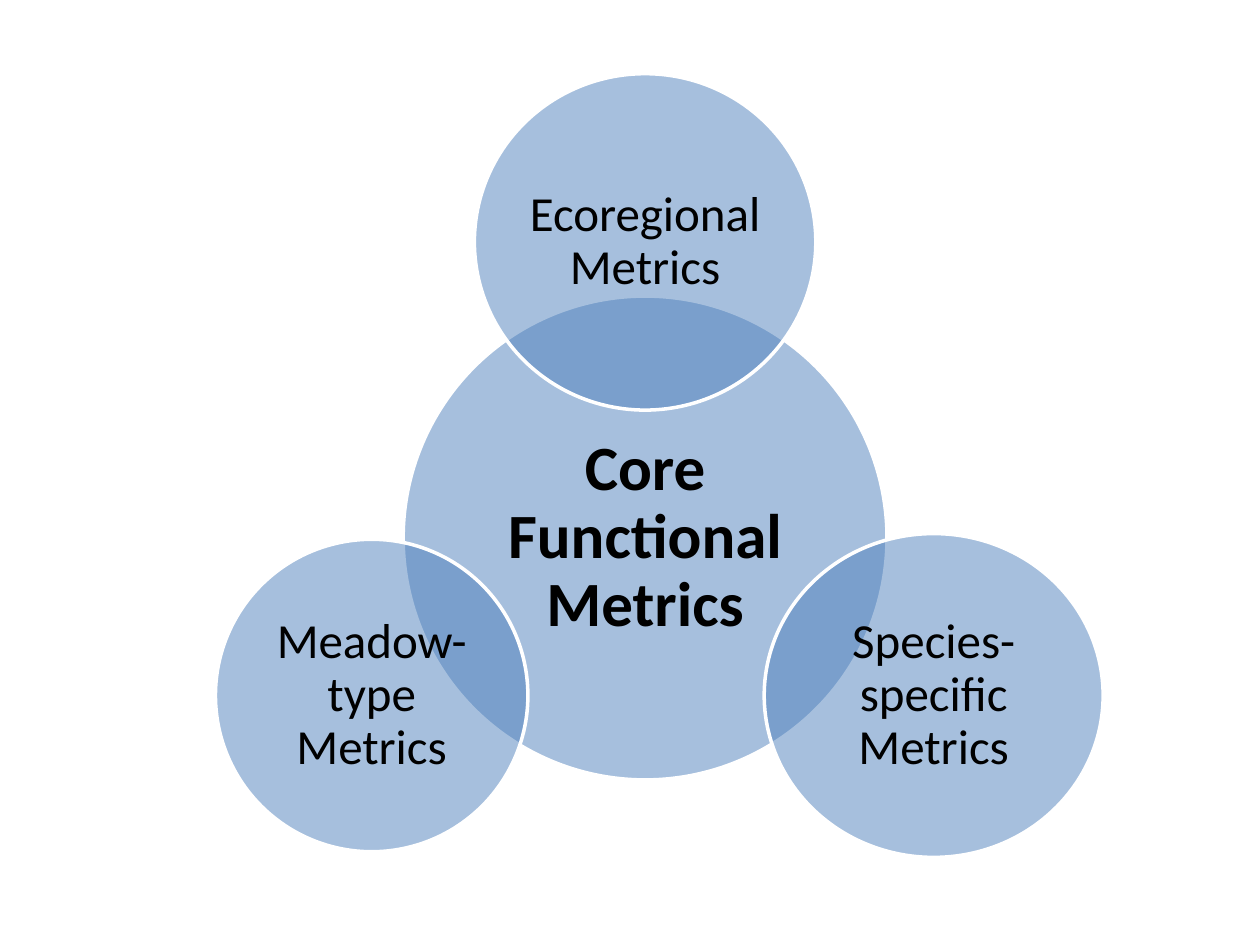
from math import sqrt

from pptx import Presentation
from pptx import util as u
from pptx.dml.color import RGBColor
from pptx.enum import shapes, text
from pptx.oxml import parse_xml
from pptx.oxml.ns import nsdecls, qn

BLUE, WHITE, BLACK = "4F81BD", "FFFFFF", "000000"
CORE = dict(size=36, bold=True, inset=0.05)
SIDE = dict(size=28, bold=False, inset=0.04)
RINGS = [
    ("Core Functional Metrics", (5.12, 4.27), (3.84, 3.84), CORE),
    ("Ecoregional Metrics", (5.12, 1.92), (2.71, 2.67), SIDE),
    ("Species-specific Metrics", (7.41, 5.52), (2.69, 2.57), SIDE),
    ("Meadow-type Metrics", (2.95, 5.52), (2.48, 2.48), SIDE),
]


def hue(code):
    return RGBColor.from_string(code)


def frame(mid, dims, scale=1):
    wide, high = (d * scale for d in dims)
    return [u.Inches(v) for v in (mid[0] - wide / 2, mid[1] - high / 2, wide, high)]


def ring(slide, mid, dims):
    oval = slide.shapes.add_shape(shapes.MSO_SHAPE.OVAL, *frame(mid, dims))
    oval.shadow.inherit = False
    oval.fill.solid()
    oval.fill.fore_color.rgb = hue(BLUE)
    tint = oval.fill._xPr.find(qn("a:solidFill"))[0]
    tint.append(parse_xml(f'<a:alpha {nsdecls("a")} val="50000"/>'))
    oval.line.color.rgb = hue(WHITE)
    oval.line.width = u.Pt(2)


def label(slide, words, box, size, bold, inset):
    area = slide.shapes.add_textbox(*box).text_frame
    area.word_wrap = True
    area.vertical_anchor = text.MSO_ANCHOR.MIDDLE
    for side in ("left", "top", "right", "bottom"):
        setattr(area, f"margin_{side}", u.Inches(inset))
    para = area.paragraphs[0]
    para.alignment = text.PP_ALIGN.CENTER
    para.line_spacing = 0.9
    run = para.add_run()
    run.text = words
    run.font.name = "Calibri"
    run.font.size = u.Pt(size)
    run.font.bold = bold
    run.font.color.rgb = hue(BLACK)


def main():
    deck = Presentation()
    deck.slide_width, deck.slide_height = u.Inches(10), u.Inches(7.5)
    slide = deck.slides.add_slide(deck.slide_layouts[6])
    for words, mid, dims, style in RINGS:
        ring(slide, mid, dims)
        label(slide, words, frame(mid, dims, 1 / sqrt(2)), **style)
    deck.save("out.pptx")


if __name__ == "__main__":
    main()
